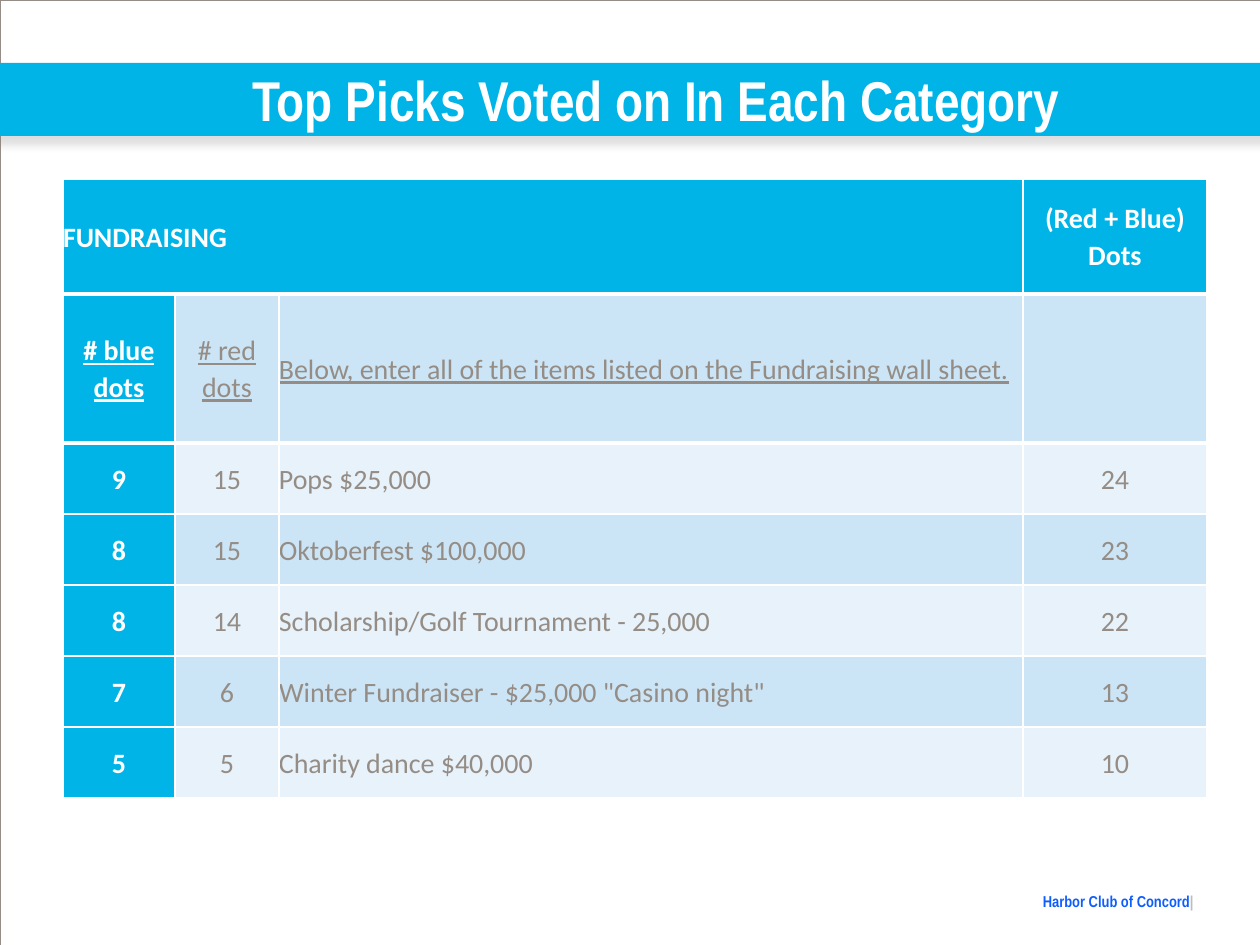
"""Build the slide of top fundraising picks with their dot votes."""
from dataclasses import dataclass

from lxml.etree import SubElement
from pptx import Presentation
from pptx.dml.color import RGBColor
from pptx.enum.shapes import MSO_SHAPE as Shape
from pptx.enum.text import MSO_ANCHOR as Anchor, MSO_AUTO_SIZE as AutoSize, PP_ALIGN as Align
from pptx.oxml.ns import qn
from pptx.util import Emu, Pt

COLORS = {
    "white": "FFFFFF", "cyan": "01B4E7", "taupe": "958D85", "pale": "E7F2FA",
    "light": "CBE5F6", "blue": "0E5EFF", "gray": "BCBDC0", "shadow": "808080",
}
EMU_PER_PX = 914400 / 126
COLUMN_WIDTHS = (112, 104, 744, 184)
ROW_HEIGHTS = (115, 149) + (71,) * 5
ITEM_COLUMN = 2
ROWS = (
    ("FUNDRAISING", "", "", "(Red + Blue) Dots"),
    ("# blue dots", "# red dots",
     "Below, enter all of the items listed on the Fundraising wall sheet.", ""),
    ("9", "15", "Pops $25,000", "24"),
    ("8", "15", "Oktoberfest $100,000", "23"),
    ("8", "14", "Scholarship/Golf Tournament - 25,000", "22"),
    ("7", "6", "Winter Fundraiser - $25,000 \"Casino night\"", "13"),
    ("5", "5", "Charity dance $40,000", "10"),
)


@dataclass(frozen=True)
class Box:
    left: int
    top: int
    width: int
    height: int

    def emu(self) -> tuple:
        return tuple(px(value) for value in (self.left, self.top, self.width, self.height))


@dataclass(frozen=True)
class TextStyle:
    font: str
    size: int
    color: str
    bold: bool = False
    underline: bool = False


def px(value: int) -> Emu:
    return Emu(round(value * EMU_PER_PX))


def rgb(name: str) -> RGBColor:
    return RGBColor.from_string(COLORS[name])


def style_font(font, style: TextStyle) -> None:
    font.name, font.size = style.font, Pt(style.size)
    font.bold, font.underline = style.bold, style.underline
    font.color.rgb = rgb(style.color)


def clear_margins(target) -> None:
    target.margin_left = target.margin_right = target.margin_top = target.margin_bottom = 0


def add_rectangle(slide, box: Box):
    shape = slide.shapes.add_shape(Shape.RECTANGLE, *box.emu())
    shape.shadow.inherit = False
    return shape


def add_frame(slide) -> None:
    frame = add_rectangle(slide, Box(0, 0, 1260, 945))
    frame.fill.background()
    frame.line.color.rgb = rgb("taupe")
    frame.line.width = Pt(0.25)


def add_band(slide) -> None:
    band = add_rectangle(slide, Box(-10, 63, 1281, 73))
    band.fill.solid()
    band.fill.fore_color.rgb = rgb("cyan")
    band.line.fill.background()
    effects = band.element.spPr.find(qn("a:effectLst"))
    shadow = SubElement(effects, qn("a:outerShdw"), blurRad=str(Pt(5)), dist=str(Pt(4.8)),
                        dir="5400000", algn="t", rotWithShape="0")
    color = SubElement(shadow, qn("a:srgbClr"), val=COLORS["shadow"])
    SubElement(color, qn("a:alpha"), val="25000")


def add_title(slide) -> None:
    title = slide.shapes.title
    title.left, title.top, title.width, title.height = Box(53, 63, 1207, 73).emu()
    title.element.getparent().append(title.element)
    frame = title.text_frame
    frame.text = "Top Picks Voted on In Each Category"
    frame.word_wrap, frame.auto_size = True, AutoSize.NONE
    frame.vertical_anchor = Anchor.MIDDLE
    clear_margins(frame)
    paragraph = frame.paragraphs[0]
    paragraph.alignment = Align.CENTER
    style_font(paragraph.runs[0].font, TextStyle("Arial Narrow", 32, "white", bold=True))


def add_footer(slide) -> None:
    frame = slide.shapes.add_textbox(*Box(976, 892, 221, 18).emu()).text_frame
    frame.word_wrap = True
    clear_margins(frame)
    paragraph = frame.paragraphs[0]
    paragraph.alignment = Align.RIGHT
    for text, color in (("Harbor Club of Concord", "blue"), ("| ", "gray")):
        run = paragraph.add_run()
        run.text = text
        style_font(run.font, TextStyle("Arial Narrow", 9, color, bold=True))


def add_borders(cell, row: int) -> None:
    properties = cell._tc.get_or_add_tcPr()
    widths = {"L": 1, "R": 1, "T": 3 if row in (1, 2) else 1, "B": 3 if row in (0, 1) else 1}
    for side, width in widths.items():
        line = SubElement(properties, qn(f"a:ln{side}"), w=str(Pt(width)))
        fill = SubElement(line, qn("a:solidFill"))
        SubElement(fill, qn("a:srgbClr"), val=COLORS["white"])


def fill_cell(cell, text: str, row: int, column: int) -> None:
    heading = row == 0 or column == 0
    left_aligned = column == ITEM_COLUMN or (row == 0 and column == 0)
    add_borders(cell, row)
    cell.fill.solid()
    cell.fill.fore_color.rgb = rgb("cyan" if heading else "light" if row % 2 else "pale")
    cell.vertical_anchor = Anchor.MIDDLE
    clear_margins(cell)
    cell.text_frame.text = text
    paragraph = cell.text_frame.paragraphs[0]
    paragraph.alignment = Align.LEFT if left_aligned else Align.CENTER
    paragraph.line_spacing = 1.07
    style = TextStyle("Calibri", 16, "white" if heading else "taupe", heading, row == 1)
    for run in paragraph.runs:
        style_font(run.font, style)


def add_votes_table(slide) -> None:
    box = Box(63, 179, sum(COLUMN_WIDTHS), sum(ROW_HEIGHTS))
    table = slide.shapes.add_table(len(ROWS), len(COLUMN_WIDTHS), *box.emu()).table
    for column, width in zip(table.columns, COLUMN_WIDTHS):
        column.width = px(width)
    for row, height in zip(table.rows, ROW_HEIGHTS):
        row.height = px(height)
    table.cell(0, 0).merge(table.cell(0, ITEM_COLUMN))
    for row, texts in enumerate(ROWS):
        for column, text in enumerate(texts):
            fill_cell(table.cell(row, column), text, row, column)


def main() -> None:
    presentation = Presentation()
    presentation.slide_width, presentation.slide_height = px(1260), px(945)
    slide = presentation.slides.add_slide(presentation.slide_layouts.get_by_name("Title Only"))
    add_footer(slide)
    add_frame(slide)
    add_band(slide)
    add_title(slide)
    add_votes_table(slide)
    presentation.save("out.pptx")


if __name__ == "__main__":
    main()
